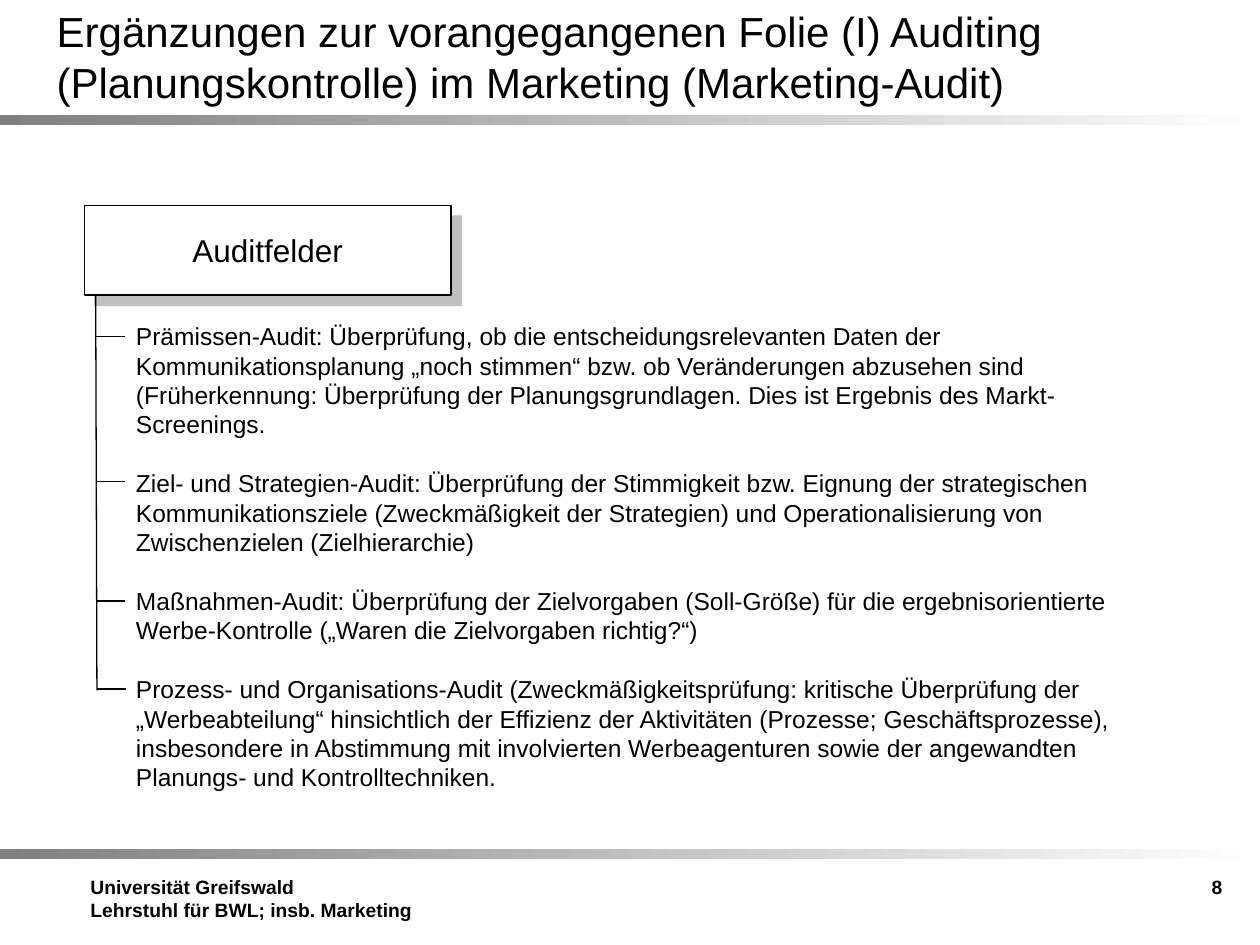
from dataclasses import dataclass

from lxml import etree
from pptx import Presentation
from pptx import util as u
from pptx.dml.color import RGBColor
from pptx.enum import shapes, text
from pptx.oxml.ns import qn

COLORS = {"ink": "000000", "paper": "FFFFFF", "band": "808080"}
FONT = "Arial"
LINE_HEIGHT = 1.2
BODY_SIZE = 14
TICK_LENGTH = 16.6


@dataclass
class Box:
    left: float
    top: float
    width: float
    height: float

    def lengths(self):
        return [u.Pt(value) for value in (self.left, self.top, self.width, self.height)]


@dataclass
class TextBlock:
    box: Box
    paragraphs: list[str]
    size: float
    bold: bool = False
    align: text.PP_ALIGN = text.PP_ALIGN.LEFT
    gap: float = 0
    grow: bool = False


@dataclass
class AuditField:
    tick_left: float
    tick_top: float
    wording: str


BANDS = [Box(0, 65.5, 720, 5.8), Box(0, 485.3, 720, 5.8)]
HEADING = Box(48.2, 117.4, 209.5, 51.1)
TITLE = TextBlock(
    Box(25.2, 9.4, 648, 45.4),
    ["Ergänzungen zur vorangegangenen Folie (I) Auditing (Planungskontrolle) "
     "im Marketing (Marketing-Audit)"],
    24,
)
FIELDS = [
    AuditField(54.7, 192.2,
               "Prämissen-Audit: Überprüfung, ob die entscheidungsrelevanten Daten der "
               "Kommunikationsplanung „noch stimmen“ bzw. ob Veränderungen abzusehen sind "
               "(Früherkennung: Überprüfung der Planungsgrundlagen. Dies ist Ergebnis des "
               "Markt-Screenings."),
    AuditField(54.7, 275,
               "Ziel- und Strategien-Audit: Überprüfung der Stimmigkeit bzw. Eignung der "
               "strategischen Kommunikationsziele (Zweckmäßigkeit der Strategien) und "
               "Operationalisierung von Zwischenzielen (Zielhierarchie)"),
    AuditField(54.7, 343.4,
               "Maßnahmen-Audit: Überprüfung der Zielvorgaben (Soll-Größe) für die "
               "ergebnisorientierte Werbe-Kontrolle („Waren die Zielvorgaben richtig?“)"),
    AuditField(55.4, 393.8,
               "Prozess- und Organisations-Audit (Zweckmäßigkeitsprüfung: kritische Überprüfung "
               "der „Werbeabteilung“ hinsichtlich der Effizienz der Aktivitäten (Prozesse; "
               "Geschäftsprozesse), insbesondere in Abstimmung mit involvierten Werbeagenturen "
               "sowie der angewandten Planungs- und Kontrolltechniken."),
]
TEXT_BLOCKS = [
    TextBlock(Box(44.6, 496.8, 209.5, 42.5),
              ["Universität Greifswald", "Lehrstuhl für BWL; insb. Marketing"], 11, bold=True),
    TextBlock(Box(537.8, 496.8, 167.8, 41), ["8"], 11, bold=True, align=text.PP_ALIGN.RIGHT),
    TextBlock(Box(70.6, 180, 583.9, 278.6), [field.wording for field in FIELDS],
              BODY_SIZE, gap=BODY_SIZE * LINE_HEIGHT, grow=True),
]


def color(name: str) -> RGBColor:
    return RGBColor.from_string(COLORS[name])


def write(frame, block: TextBlock) -> None:
    frame.text = "\n".join(block.paragraphs)
    frame.word_wrap = True
    for index, paragraph in enumerate(frame.paragraphs):
        paragraph.alignment = block.align
        if index and block.gap:
            paragraph.space_before = u.Pt(block.gap)
        for run in paragraph.runs:
            run.font.name = FONT
            run.font.size = u.Pt(block.size)
            run.font.bold = block.bold
            run.font.color.rgb = color("ink")


def add_text(slide, block: TextBlock) -> None:
    frame = slide.shapes.add_textbox(*block.box.lengths()).text_frame
    write(frame, block)
    if block.grow:
        frame.auto_size = text.MSO_AUTO_SIZE.SHAPE_TO_FIT_TEXT


def add_rectangle(slide, box: Box):
    shape = slide.shapes.add_shape(shapes.MSO_SHAPE.RECTANGLE, *box.lengths())
    shape.shadow.inherit = False
    return shape


def add_band(slide, box: Box) -> None:
    shape = add_rectangle(slide, box)
    shape.line.fill.background()
    shape.fill.gradient()
    shape.fill.gradient_angle = 0
    for stop, name, position in zip(shape.fill.gradient_stops, ("band", "paper"), (0, 1)):
        stop.color.rgb = color(name)
        stop.position = position


def add_heading(slide, box: Box, wording: str) -> None:
    shape = add_rectangle(slide, box)
    shape.fill.solid()
    shape.fill.fore_color.rgb = color("paper")
    shape.line.color.rgb = color("ink")
    shape.line.width = u.Pt(0.75)
    effects = shape.element.spPr.find(qn("a:effectLst"))
    shadow = etree.SubElement(effects, qn("a:outerShdw"), blurRad="0", dist=str(u.Pt(8.5)),
                              dir="2700000", algn="ctr", rotWithShape="0")
    shade = etree.SubElement(shadow, qn("a:srgbClr"), val=COLORS["band"])
    etree.SubElement(shade, qn("a:alpha"), val="50000")
    write(shape.text_frame, TextBlock(box, [wording], 18, align=text.PP_ALIGN.CENTER))
    shape.text_frame.vertical_anchor = text.MSO_ANCHOR.MIDDLE


def add_line(slide, *points: float) -> None:
    connector = slide.shapes.add_connector(
        shapes.MSO_CONNECTOR.STRAIGHT, *[u.Pt(value) for value in points])
    connector.line.color.rgb = color("ink")
    connector.line.width = u.Pt(0.75)
    etree.SubElement(connector.element.spPr, qn("a:effectLst"))


def set_title(slide, block: TextBlock) -> None:
    title = slide.shapes.title
    title.left, title.top, title.width, title.height = block.box.lengths()
    write(title.text_frame, block)
    title.text_frame.auto_size = text.MSO_AUTO_SIZE.NONE
    title.text_frame.vertical_anchor = text.MSO_ANCHOR.MIDDLE


def main() -> None:
    presentation = Presentation()
    presentation.slide_width, presentation.slide_height = u.Pt(720), u.Pt(540)
    slide = presentation.slides.add_slide(presentation.slide_layouts[5])
    set_title(slide, TITLE)
    for band in BANDS:
        add_band(slide, band)
    for block in TEXT_BLOCKS:
        add_text(slide, block)
    add_heading(slide, HEADING, "Auditfelder")
    first, last = FIELDS[0], FIELDS[-1]
    add_line(slide, first.tick_left, HEADING.top + HEADING.height,
             last.tick_left, last.tick_top + 0.7)
    for field in FIELDS:
        add_line(slide, field.tick_left, field.tick_top,
                 field.tick_left + TICK_LENGTH, field.tick_top)
    presentation.save("out.pptx")


if __name__ == "__main__":
    main()
